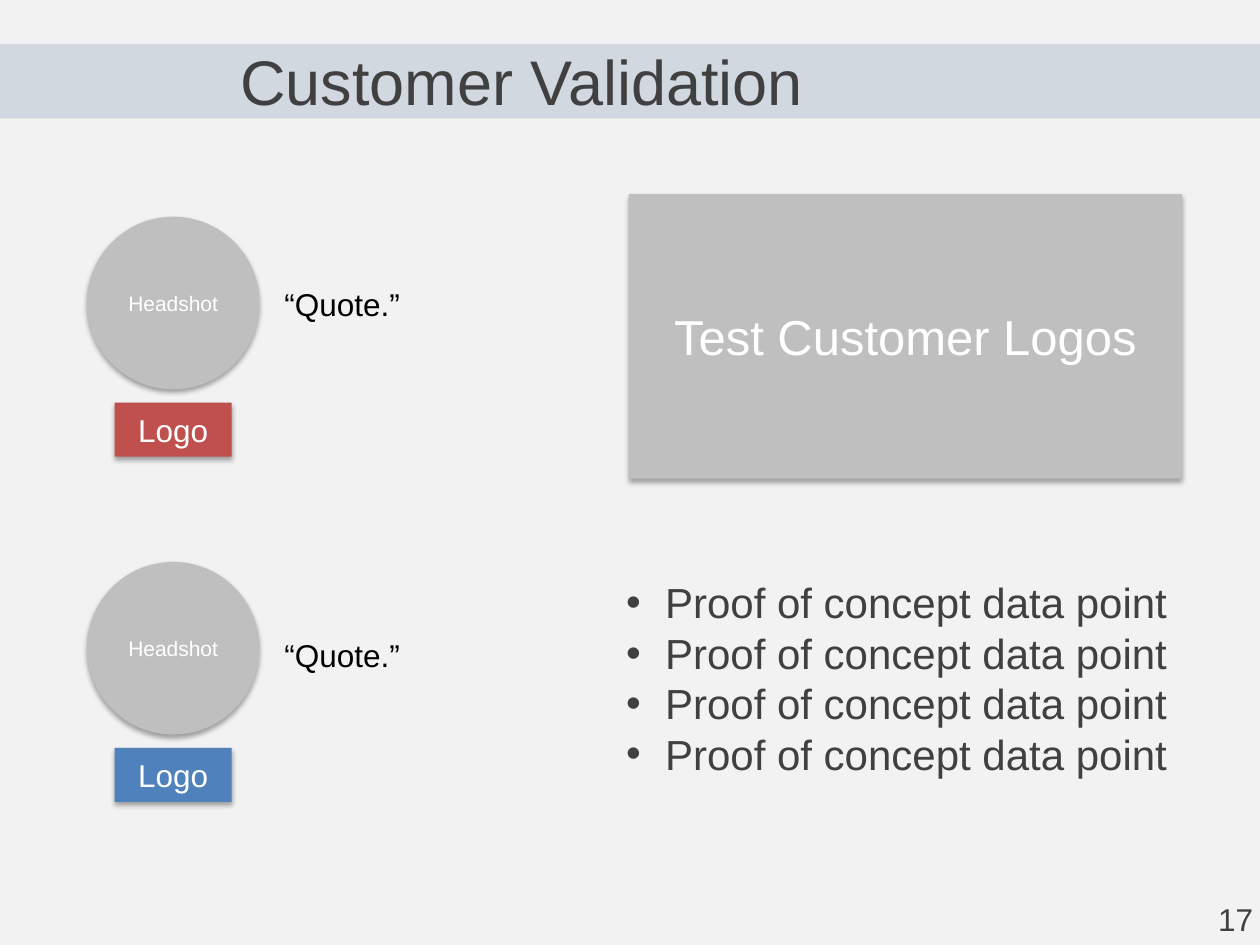
from lxml import etree
from pptx import Presentation
from pptx.dml.color import RGBColor
from pptx.enum.shapes import MSO_SHAPE
from pptx.enum.text import MSO_ANCHOR, MSO_AUTO_SIZE, PP_ALIGN
from pptx.oxml.ns import qn
from pptx.util import Inches, Pt

RECT, OVAL = MSO_SHAPE.RECTANGLE, MSO_SHAPE.OVAL
LEFT, CENTER = PP_ALIGN.LEFT, PP_ALIGN.CENTER
TOP, MIDDLE = MSO_ANCHOR.TOP, MSO_ANCHOR.MIDDLE
FIT, FIXED = MSO_AUTO_SIZE.SHAPE_TO_FIT_TEXT, MSO_AUTO_SIZE.NONE

COLUMNS, ROWS = 100, 75
COLORS = {
    "page": "F2F2F2", "band": "1F497D", "gray": "BFBFBF", "red": "C0504D",
    "blue": "4F81BD", "dark": "404040", "black": "000000", "white": "FFFFFF",
}


def write_text(frame, text, size=18, color="dark", align=LEFT, anchor=TOP,
               spacing=None, bullet=None, indent=0.31):
    """Fill a text frame, one paragraph for each line of text."""
    frame.vertical_anchor = anchor
    for index, line in enumerate(text.split("\n")):
        para = frame.add_paragraph() if index else frame.paragraphs[0]
        para.alignment = align
        if spacing:
            para.line_spacing = spacing
        if bullet:
            properties = para._p.get_or_add_pPr()
            properties.set("marL", str(Inches(indent)))
            properties.set("indent", str(-Inches(indent)))
            etree.SubElement(properties, qn("a:buFont"), typeface="Arial")
            etree.SubElement(properties, qn("a:buChar"), char=bullet)
        span = para.add_run()
        span.text = line
        span.font.name = "Arial"
        span.font.size = Pt(size)
        span.font.color.rgb = RGBColor.from_string(COLORS[color])


class SlideBuilder:
    """Holds the deck, its grid and the current page."""

    def __init__(self, width, height):
        self.deck = Presentation()
        self.deck.slide_width, self.deck.slide_height = Inches(width), Inches(height)
        self.column = self.deck.slide_width / COLUMNS
        self.row = self.deck.slide_height / ROWS
        self.page = self.deck.slides.add_slide(self.deck.slide_layouts[6])
        fill = self.page.background.fill
        fill.solid()
        fill.fore_color.rgb = RGBColor.from_string(COLORS["page"])

    def place(self, left, top, width, height):
        return (round(left * self.column), round(top * self.row),
                round(width * self.column), round(height * self.row))

    def shape(self, kind, area, color, alpha=None, shadow=False, text=None, size=18):
        shape = self.page.shapes.add_shape(kind, *self.place(*area))
        shape.fill.solid()
        shape.fill.fore_color.rgb = RGBColor.from_string(COLORS[color])
        shape.line.fill.background()
        shape.shadow.inherit = False
        properties = shape._element.spPr
        if alpha:
            fill_color = properties.find(qn("a:solidFill")).find(qn("a:srgbClr"))
            etree.SubElement(fill_color, qn("a:alpha"), val=str(alpha * 1000))
        if shadow:
            outer = etree.SubElement(
                properties.find(qn("a:effectLst")), qn("a:outerShdw"),
                blurRad=str(Pt(3.1)), dist=str(Pt(1.8)), dir="5400000", rotWithShape="0")
            shade = etree.SubElement(outer, qn("a:srgbClr"), val=COLORS["black"])
            etree.SubElement(shade, qn("a:alpha"), val="35000")
        if text:
            write_text(shape.text_frame, text, size=size, color="white",
                       align=CENTER, anchor=MIDDLE)

    def text(self, area, text, wrap=False, inset_top=0.05, **style):
        frame = self.page.shapes.add_textbox(*self.place(*area)).text_frame
        frame.word_wrap = wrap
        frame.auto_size = FIXED if wrap else FIT
        frame.margin_top = Inches(inset_top)
        write_text(frame, text, **style)

    def testimonial(self, top, quote_top, logo_color):
        self.shape(OVAL, (6.9, top, 13.7, 13.7), "gray", shadow=True,
                   text="Headshot", size=12)
        self.shape(RECT, (9.1, top + 14.75, 9.3, 4.3), logo_color, shadow=True, text="Logo")
        self.text((21.6, quote_top, 11.6, 4), "“Quote.”", color="black")


def main():
    builder = SlideBuilder(10, 7.5)
    builder.shape(RECT, (0, 3.5, COLUMNS, 5.9), "band", alpha=15)
    builder.text((18.1, 3.5, 67, 5.9), "Customer Validation", wrap=True,
                 inset_top=0.1, size=36, spacing=0.8)
    builder.testimonial(17.2, 22.1, "red")
    builder.testimonial(44.6, 50, "blue")
    builder.shape(RECT, (49.9, 15.4, 43.9, 22.6), "gray", shadow=True,
                  text="Test Customer Logos", size=28)
    builder.text((48.7, 45.3, 46.1, 17.2), "\n".join(["Proof of concept data point"] * 4),
                 size=24, bullet="•")
    builder.text((95.7, 70.9, 4.8, 4), "17")
    builder.deck.save("out.pptx")


if __name__ == "__main__":
    main()
